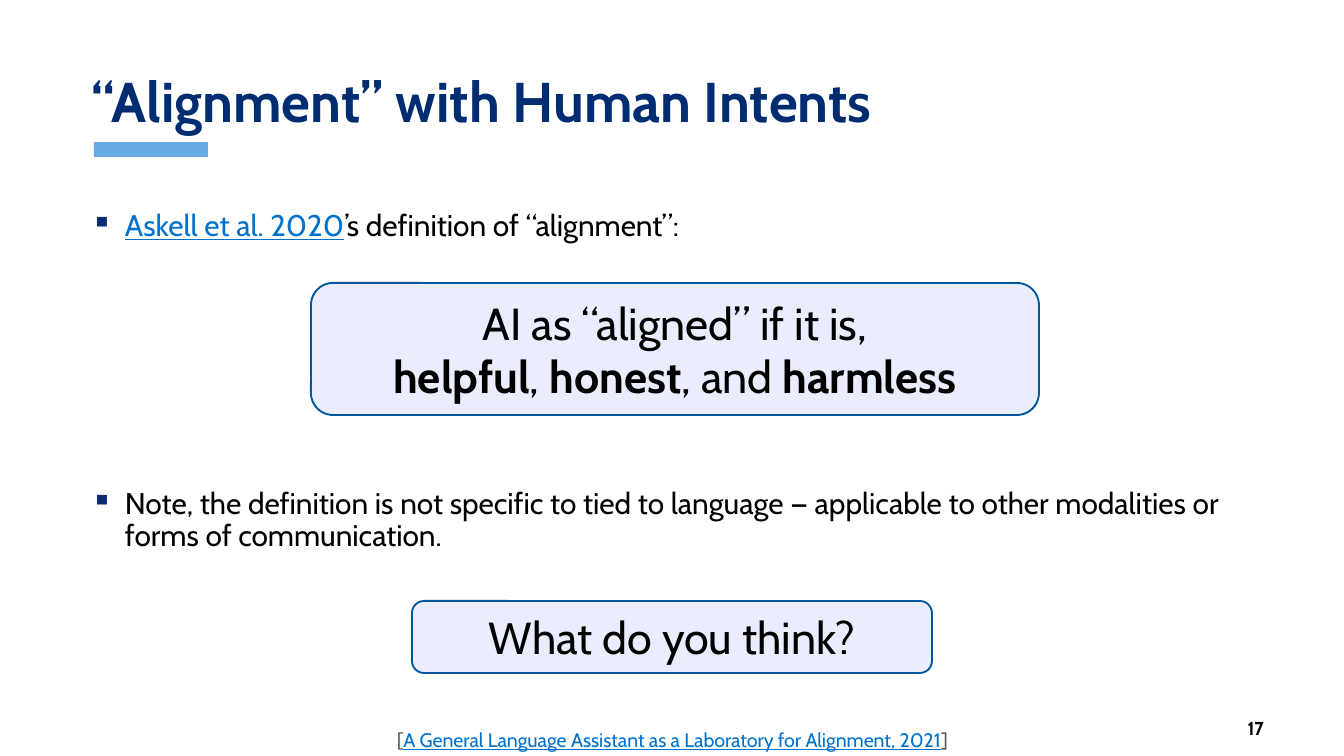
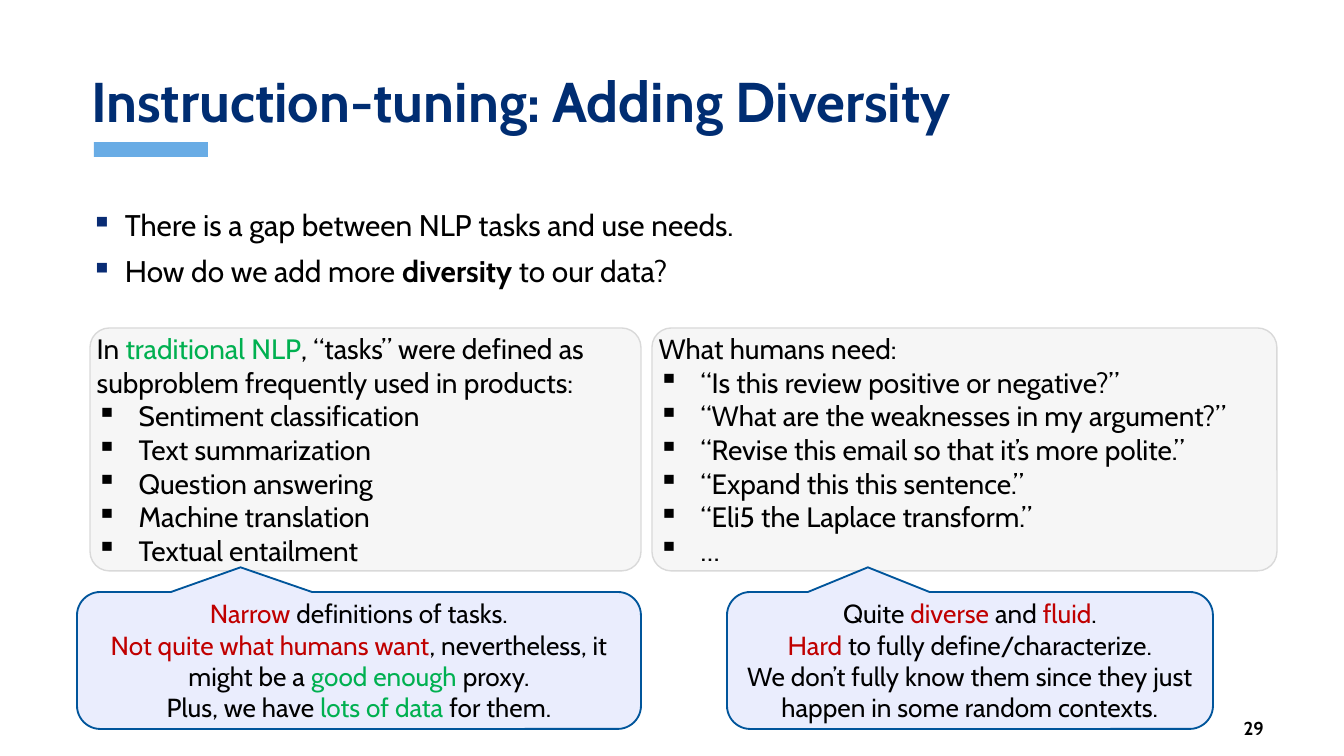
from lxml import etree
from pptx import Presentation
from pptx.dml.color import RGBColor
from pptx.enum.shapes import MSO_SHAPE
from pptx.enum.text import MSO_ANCHOR, MSO_AUTO_SIZE, PP_ALIGN
from pptx.oxml.ns import qn
from pptx.util import Emu, Pt

RECTANGLE = MSO_SHAPE.RECTANGLE
ROUNDED = MSO_SHAPE.ROUNDED_RECTANGLE
CALLOUT = MSO_SHAPE.ROUNDED_RECTANGULAR_CALLOUT
TOP, MIDDLE, BOTTOM = MSO_ANCHOR.TOP, MSO_ANCHOR.MIDDLE, MSO_ANCHOR.BOTTOM
LEFT, CENTER, RIGHT = PP_ALIGN.LEFT, PP_ALIGN.CENTER, PP_ALIGN.RIGHT

EMU_PER_PX = 914400 / 134.4
SLIDE_SIZE = (1344, 756)
FONT = "Cabin"
BLACK, NAVY, GRAY = "000000", "002D72", "595959"
BULLET_NAVY = "092C74"
BAR_BLUE = "69ACE5"
BOX_FILL, BOX_LINE = "EAEDFD", "00559B"
PANEL_FILL, PANEL_LINE, PANEL_OPACITY = "F2F2F2", "D9D9D9", 64

BOLD = {"bold": True}
LINK = {"color": "0072CE", "underline": True}
RED = {"color": "C00000"}
GREEN = {"color": "00B050"}

TITLE_AREA = (78, 16, 1188, 126)
TITLE_BAR = (94, 142, 114, 15)
NUMBER_AREA = (1160, 715, 117, 26)
CITATION_AREA = (46, 723, 1253, 34)
BODY_LEFT, BODY_WIDTH = 78, 1188
PANEL_TOP, PANEL_HEIGHT = 328, 243
CALLOUT_TOP, CALLOUT_HEIGHT = 592, 137
CALLOUT_SHAPE = (-0.21, -0.68, 0.17)
PANEL_CORNER = (0.08,)
DEFAULT_INSETS = (13, 7)
CITATION_INSETS = (9, 5)
PANEL_INSETS = (1, 7)

SLIDES = [
    {
        "title": "“Alignment” with Human Intents",
        "number": "17",
        "bodies": [
            (204, 60, [[("Askell et al. 2020", LINK), "’s definition of “alignment”:"]]),
            (482, 90, [["Note, the definition is not specific to tied to language — "
                        "applicable to other modalities or forms of communication."]]),
        ],
        "statements": [
            ((311, 283, 728, 132), [[
                "AI as “aligned” if it is,", "\n",
                ("helpful", BOLD), ", ", ("honest", BOLD), ", and ", ("harmless", BOLD),
            ]]),
            ((412, 601, 520, 72), [["What do you think?"]]),
        ],
        "citation": [[
            "[",
            ("A General Language Assistant as a Laboratory for Alignment, 2021", LINK),
            "]",
        ]],
    },
    {
        "title": "Instruction-tuning: Adding Diversity",
        "number": "29",
        "bodies": [
            (204, 100, [
                ["There is a gap between NLP tasks and use needs."],
                ["How do we add more ", ("diversity", BOLD), " to our data?"],
            ]),
        ],
        "panels": [
            (90, 551, [
                ["In ", ("traditional NLP", GREEN),
                 ", “tasks” were defined as subproblem frequently used in products:"],
                ["Sentiment classification"],
                ["Text summarization"],
                ["Question answering"],
                ["Machine translation"],
                ["Textual entailment"],
            ]),
            (652, 625, [
                ["What humans need:"],
                ["“Is this review positive or negative?”"],
                ["“What are the weaknesses in my argument?”"],
                ["“Revise this email so that it’s more polite.”"],
                ["“Expand this this sentence.”"],
                ["“Eli5 the Laplace transform.”"],
                ["…"],
            ]),
        ],
        "callouts": [
            (727, 486, [
                ["Quite ", ("diverse ", RED), "and ", ("fluid", RED), ".", "\n",
                 ("Hard ", RED), "to fully define/characterize."],
                ["We don’t fully know them since they just happen in some random contexts."],
            ]),
            (77, 564, [
                [("Narrow", RED), " definitions of tasks."],
                [("Not quite what humans want", RED), ", nevertheless, it might be a ",
                 ("good enough ", GREEN), "proxy."],
                ["Plus, we have ", ("lots of data ", GREEN), "for them."],
            ]),
        ],
    },
]


def px(value):
    return Emu(round(value * EMU_PER_PX))


def rgb(value):
    return RGBColor.from_string(value)


def place(shape, area):
    shape.left, shape.top, shape.width, shape.height = map(px, area)


def add_bullet(paragraph, color, indent):
    properties = paragraph._p.get_or_add_pPr()
    properties.set("marL", str(px(indent)))
    properties.set("indent", str(-px(indent)))
    bullet_color = etree.SubElement(properties, qn("a:buClr"))
    etree.SubElement(bullet_color, qn("a:srgbClr"), val=color)
    etree.SubElement(properties, qn("a:buChar"), char="▪")


def add_runs(paragraph, runs):
    for item in runs:
        if item == "\n":
            paragraph.add_line_break()
            continue
        text, style = (item, {}) if isinstance(item, str) else item
        run = paragraph.add_run()
        run.text = text
        if "color" in style:
            run.font.color.rgb = rgb(style["color"])
        if "bold" in style:
            run.font.bold = True
        if "underline" in style:
            run.font.underline = True


def write(shape, paragraphs, size, color=BLACK, bold=False, align=LEFT, anchor=TOP,
          insets=DEFAULT_INSETS, bullet=None, first_bullet=0, line=1.0, gap=0):
    frame = shape.text_frame
    frame.word_wrap = True
    frame.auto_size = MSO_AUTO_SIZE.NONE
    frame.vertical_anchor = anchor
    frame.margin_left = frame.margin_right = px(insets[0])
    frame.margin_top = frame.margin_bottom = px(insets[1])
    for index, runs in enumerate(paragraphs):
        paragraph = frame.add_paragraph() if index else frame.paragraphs[0]
        if bullet and index >= first_bullet:
            add_bullet(paragraph, *bullet)
        paragraph.alignment = align
        paragraph.line_spacing = line
        paragraph.space_before = Pt(gap if index else 0)
        font = paragraph.font
        font.name, font.size, font.bold = FONT, Pt(size), bold
        font.color.rgb = rgb(color)
        add_runs(paragraph, runs)


def add_box(slide, kind, area, fill, line=None, line_width=1, adjustments=()):
    shape = slide.shapes.add_shape(kind, *map(px, area))
    shape.shadow.inherit = False
    shape.fill.solid()
    shape.fill.fore_color.rgb = rgb(fill)
    if line:
        shape.line.color.rgb = rgb(line)
        shape.line.width = Pt(line_width)
    else:
        shape.line.fill.background()
    for index, value in enumerate(adjustments):
        shape.adjustments[index] = value
    return shape


def add_text(slide, area, paragraphs, size, **style):
    write(slide.shapes.add_textbox(*map(px, area)), paragraphs, size, **style)


def add_panel(slide, left, width, paragraphs):
    panel = add_box(slide, ROUNDED, (left, PANEL_TOP, width, PANEL_HEIGHT),
                    PANEL_FILL, PANEL_LINE, 0.75, PANEL_CORNER)
    fill_color = panel._element.spPr.find(qn("a:solidFill")).find(qn("a:srgbClr"))
    etree.SubElement(fill_color, qn("a:alpha"), val=str(PANEL_OPACITY * 1000))
    write(panel, paragraphs, 15, anchor=MIDDLE, insets=PANEL_INSETS,
          bullet=(BLACK, 42), first_bullet=1)


def add_frame(presentation, content):
    slide = presentation.slides.add_slide(presentation.slide_layouts[5])
    add_box(slide, RECTANGLE, TITLE_BAR, BAR_BLUE)
    add_text(slide, NUMBER_AREA, [[content["number"]]], 10, bold=True,
             align=RIGHT, anchor=MIDDLE)
    title = slide.shapes.title
    place(title, TITLE_AREA)
    write(title, [[content["title"]]], 30, color=NAVY, bold=True, anchor=BOTTOM, line=0.9)
    return slide


def build_slide(presentation, content):
    slide = add_frame(presentation, content)
    for top, height, paragraphs in content["bodies"]:
        add_text(slide, (BODY_LEFT, top, BODY_WIDTH, height), paragraphs, 16,
                 bullet=(BULLET_NAVY, 34), line=0.9, gap=7.5)
    if "citation" in content:
        add_text(slide, CITATION_AREA, content["citation"], 10.5, color=GRAY,
                 align=CENTER, insets=CITATION_INSETS)
    for area, paragraphs in content.get("statements", []):
        statement = add_box(slide, ROUNDED, area, BOX_FILL, BOX_LINE)
        write(statement, paragraphs, 24, align=CENTER, anchor=MIDDLE)
    for left, width, paragraphs in content.get("panels", []):
        add_panel(slide, left, width, paragraphs)
    for left, width, paragraphs in content.get("callouts", []):
        callout = add_box(slide, CALLOUT, (left, CALLOUT_TOP, width, CALLOUT_HEIGHT),
                          BOX_FILL, BOX_LINE, adjustments=CALLOUT_SHAPE)
        write(callout, paragraphs, 14, align=CENTER, anchor=MIDDLE)


def main():
    presentation = Presentation()
    presentation.slide_width, presentation.slide_height = map(px, SLIDE_SIZE)
    for content in SLIDES:
        build_slide(presentation, content)
    presentation.save("out.pptx")


if __name__ == "__main__":
    main()
